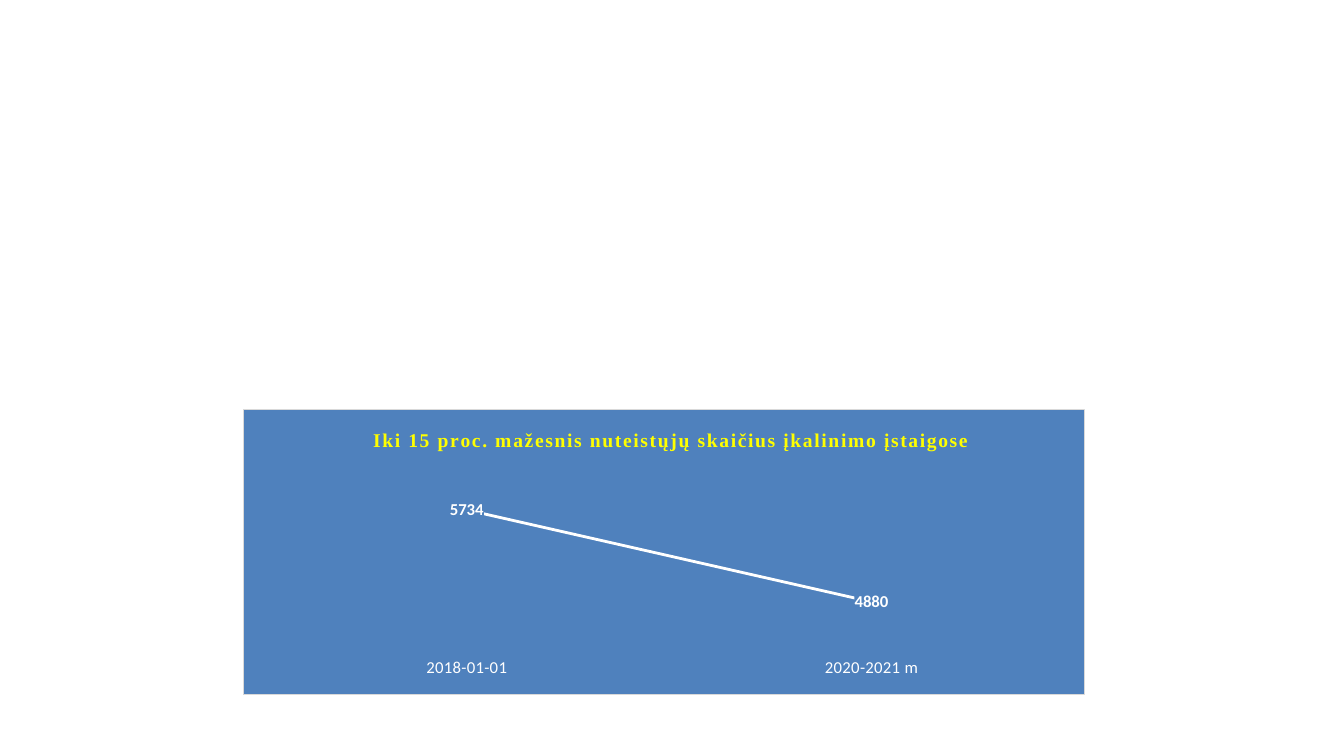
from lxml.etree import fromstring
from pptx import Presentation
from pptx.chart.data import CategoryChartData
from pptx.dml.color import RGBColor
from pptx.enum.chart import (XL_CHART_TYPE, XL_LABEL_POSITION, XL_MARKER_STYLE,
                             XL_TICK_MARK)
from pptx.oxml.ns import nsdecls, qn
from pptx.util import Pt

WHITE = RGBColor(0xFF, 0xFF, 0xFF)
BLACK = RGBColor(0x00, 0x00, 0x00)
BLUE = RGBColor(0x4F, 0x81, 0xBD)
YELLOW = RGBColor(0xFF, 0xFF, 0x00)
GREY = RGBColor(0xD9, 0xD9, 0xD9)


class Deck:
    styles = {
        "base": {"name": "Calibri", "size": Pt(10), "color": BLACK},
        "title": {"name": "Times New Roman", "size": Pt(14), "bold": True,
                  "color": YELLOW},
        "axis": {"name": "Calibri", "size": Pt(12), "color": WHITE},
        "label": {"name": "Calibri", "size": Pt(12), "bold": True,
                  "color": WHITE},
    }

    def __init__(self, wide, high):
        self.prs = Presentation()
        self.prs.slide_width, self.prs.slide_height = Pt(wide), Pt(high)
        self.slide = self.prs.slides.add_slide(self.prs.slide_layouts[6])

    def font(self, font, style):
        for key, value in self.styles[style].items():
            if key == "color":
                font.color.rgb = value
            else:
                setattr(font, key, value)

    def fill(self, next_part, color, line=None):
        """Put a filled shape style just before the given chart part."""
        solid = '<a:solidFill><a:srgbClr val="{}"/></a:solidFill>'.format
        edge = f'<a:ln w="{Pt(0.75)}">{solid(line)}</a:ln>' if line else ""
        next_part.addprevious(fromstring(
            f'<c:spPr {nsdecls("c", "a")}>{solid(color)}{edge}</c:spPr>'))

    def place(self, part, **spots):
        """Fix a chart part at fractions of the chart's size."""
        old = part.find(qn("c:layout"))
        spot = len(part) if old is None else part.index(old)
        if old is None:
            spot = 0
        else:
            part.remove(old)
        inner = '<c:layoutTarget val="inner"/>' if "w" in spots else ""
        modes = "".join(f'<c:{k}Mode val="edge"/>' for k in "xy")
        sizes = "".join(f'<c:{k} val="{v}"/>' for k, v in spots.items())
        part.insert(spot, fromstring(
            f'<c:layout {nsdecls("c")}><c:manualLayout>{inner}{modes}{sizes}'
            '</c:manualLayout></c:layout>'))

    def chart(self, box, title, points):
        data = CategoryChartData()
        data.categories = list(points)
        data.add_series("Series 1", list(points.values()))
        chart = self.slide.shapes.add_chart(
            XL_CHART_TYPE.LINE, *map(Pt, box), data).chart
        chart.has_legend = False
        self.font(chart.font, "base")
        root = chart._chartSpace
        self.fill(root.find(qn("c:txPr")), BLUE, GREY)
        self.head(chart, title)
        self.axes(chart)
        self.line(chart.plots[0])
        self.place(root.find(".//" + qn("c:plotArea")),
                   x=0.025, y=0.251, w=0.963, h=0.604)

    def head(self, chart, text):
        chart.has_title = True
        title = chart.chart_title
        run = title.text_frame.paragraphs[0].add_run()
        run.text = text
        self.font(run.font, "title")
        run._r.get_or_add_rPr().set("spc", "107")
        self.place(title._element, x=0.15, y=0.05)

    def axes(self, chart):
        axis = chart.category_axis
        axis.major_tick_mark = XL_TICK_MARK.NONE
        axis.format.line.fill.background()
        self.font(axis.tick_labels.font, "axis")
        axis._element.find(".//" + qn("a:defRPr")).set("spc", "20")
        scale = chart.value_axis
        scale.minimum_scale, scale.maximum_scale = 4400, 6000
        scale.has_major_gridlines = False
        scale.visible = False

    def line(self, plot):
        plot.vary_by_categories = False
        row = plot.series[0]
        row.smooth = False
        row.marker.style = XL_MARKER_STYLE.NONE
        row.format.line.color.rgb = WHITE
        row.format.line.width = Pt(2)
        labels = row.data_labels
        labels.show_value = True
        labels.position = XL_LABEL_POSITION.CENTER
        self.font(labels.font, "label")
        self.fill(labels._element.find(qn("c:txPr")), BLUE)


def main():
    deck = Deck(960, 540)
    deck.chart((173.5, 292.3, 601.2, 204.5),
               "Iki 15 proc. mažesnis nuteistųjų skaičius įkalinimo įstaigose",
               {"2018-01-01": 5734, "2020-2021 m": 4880})
    deck.prs.save("out.pptx")


if __name__ == "__main__":
    main()
